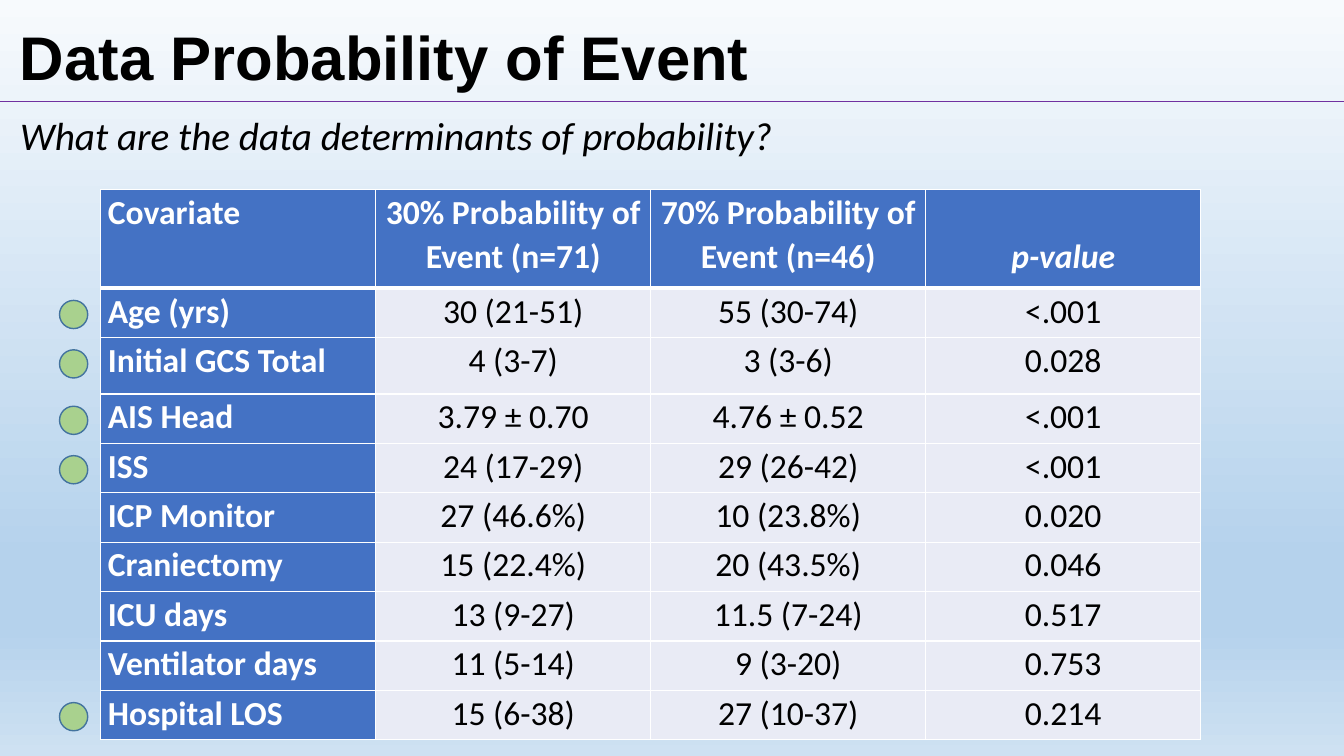
from lxml import etree
from pptx import Presentation
from pptx.dml.color import RGBColor
from pptx.enum.shapes import MSO_CONNECTOR as CONN, MSO_SHAPE as SHAPE
from pptx.enum.text import MSO_ANCHOR as ANCHOR, MSO_AUTO_SIZE as AUTO, PP_ALIGN as ALIGN
from pptx.oxml.ns import qn
from pptx.util import Inches, Pt

BLACK, WHITE, BLUE, PALE = "000000", "FFFFFF", "4472C4", "E9EBF5"
BACKGROUND = [(0, "F7FAFD"), (74, "B5D2EC"), (83, "B5D2EC"), (100, "CEE1F2")]
HEADER = ["Covariate", "30% Probability of Event (n=71)",
          "70% Probability of Event (n=46)", "p-value"]
COVARIATES = [
    ["Age (yrs)", "30 (21-51)", "55 (30-74)", "<.001"],
    ["Initial GCS Total", "4 (3-7)", "3 (3-6)", "0.028"],
    ["AIS Head", "3.79 ± 0.70", "4.76 ± 0.52", "<.001"],
    ["ISS", "24 (17-29)", "29 (26-42)", "<.001"],
    ["ICP Monitor", "27 (46.6%)", "10 (23.8%)", "0.020"],
    ["Craniectomy", "15 (22.4%)", "20 (43.5%)", "0.046"],
    ["ICU days", "13 (9-27)", "11.5 (7-24)", "0.517"],
    ["Ventilator days", "11 (5-14)", "9 (3-20)", "0.753"],
    ["Hospital LOS", "15 (6-38)", "27 (10-37)", "0.214"],
]
ROW_HEIGHTS = [0.98, 0.49, 0.56] + [0.49] * 7
MARKED_ROWS = [1, 2, 3, 4, 9]


def rgb(color):
    return RGBColor.from_string(color)


def style_runs(p, font, size, color, bold=False, italic=False):
    for r in p.runs:
        f = r.font
        f.name, f.size, f.bold, f.italic = font, Pt(size), bold, italic
        f.color.rgb = rgb(color)


def add_background(s):
    fill = s.background.fill
    fill.gradient()
    fill.gradient_angle = 270
    stops = s.element.find(".//" + qn("a:gsLst"))
    for stop in list(stops):
        stops.remove(stop)
    for position, color in BACKGROUND:
        stop = etree.SubElement(stops, qn("a:gs"), pos=str(position * 1000))
        etree.SubElement(stop, qn("a:srgbClr"), val=color)


def add_text(s, text, left, top, width, height):
    tf = s.shapes.add_textbox(*map(Inches, (left, top, width, height))).text_frame
    tf.text = text
    return tf


def add_heading(s, left, top, width):
    # Title
    tf = add_text(s, "Data Probability of Event", left + 0.1, top + 0.14, 11.5, 0.92)
    tf.word_wrap = True
    tf.vertical_anchor = ANCHOR.MIDDLE
    tf.paragraphs[0].line_spacing = 0.9
    style_runs(tf.paragraphs[0], "Arial", 44, BLACK, bold=True)

    # Rule under the title
    y = Inches(top + 1.01)
    rule = s.shapes.add_connector(CONN.STRAIGHT, Inches(left), y, Inches(left + width), y)
    rule.line.color.rgb = rgb("7030A0")
    rule.line.width = Pt(1)
    etree.SubElement(rule.element.spPr, qn("a:effectLst"))

    # Question
    tf = add_text(s, "What are the data determinants of probability?",
                  left + 0.1, top + 1.06, 7.78, 0.57)
    tf.word_wrap = False
    tf.auto_size = AUTO.SHAPE_TO_FIT_TEXT
    style_runs(tf.paragraphs[0], "Calibri", 28, BLACK, italic=True)


def set_borders(cell, bottom_width):
    tc_pr = cell._tc.get_or_add_tcPr()
    for side, width in (("L", 1), ("R", 1), ("T", 1), ("B", bottom_width)):
        ln = etree.SubElement(tc_pr, qn("a:ln" + side), w=str(Pt(width)))
        fill = etree.SubElement(ln, qn("a:solidFill"))
        etree.SubElement(fill, qn("a:srgbClr"), val=WHITE)


def add_covariate_table(s, left, top, width):
    rows = [HEADER] + COVARIATES
    table = s.shapes.add_table(len(rows), len(HEADER), Inches(left), Inches(top),
                               Inches(width), Inches(sum(ROW_HEIGHTS))).table
    table.horz_banding = False
    for column in table.columns:
        column.width = Inches(width / len(HEADER))
    for i, values in enumerate(rows):
        table.rows[i].height = Inches(ROW_HEIGHTS[i])
        for j, value in enumerate(values):
            cell = table.cell(i, j)
            heading = i == 0 or j == 0
            set_borders(cell, 3 if i == 0 else 1)
            cell.fill.solid()
            cell.fill.fore_color.rgb = rgb(BLUE if heading else PALE)
            cell.margin_left = cell.margin_right = Inches(0.07)
            cell.margin_top = cell.margin_bottom = 0
            cell.text = value
            p = cell.text_frame.paragraphs[0]
            p.alignment = ALIGN.CENTER if j else ALIGN.LEFT
            p.line_spacing = 1.07
            style_runs(p, "Calibri", 24, WHITE if heading else BLACK,
                       bold=heading, italic=value == "p-value")
    # The last heading lines up with the second line of its neighbours
    p_value = table.cell(0, len(HEADER) - 1)
    p_value.vertical_anchor = ANCHOR.BOTTOM
    p_value.margin_bottom = Inches(0.11)


def add_row_markers(s, left, table_top):
    for row in MARKED_ROWS:
        top = table_top + sum(ROW_HEIGHTS[:row]) + 0.12
        sp = s.shapes.add_shape(SHAPE.FLOWCHART_CONNECTOR, Inches(left), Inches(top),
                                Inches(0.28), Inches(0.28))
        sp.shadow.inherit = False
        sp.fill.solid()
        sp.fill.fore_color.rgb = rgb("A9D18E")
        sp.line.color.rgb = rgb("43739E")
        sp.line.width = Pt(1)


def main():
    prs = Presentation()
    prs.slide_width, prs.slide_height = Inches(13.33), Inches(7.5)
    s = prs.slides.add_slide(prs.slide_layouts[6])
    add_background(s)
    add_heading(s, 0, 0, 13.33)
    add_covariate_table(s, 1, 1.88, 10.91)
    add_row_markers(s, 0.59, 1.88)
    prs.save("out.pptx")


if __name__ == "__main__":
    main()
